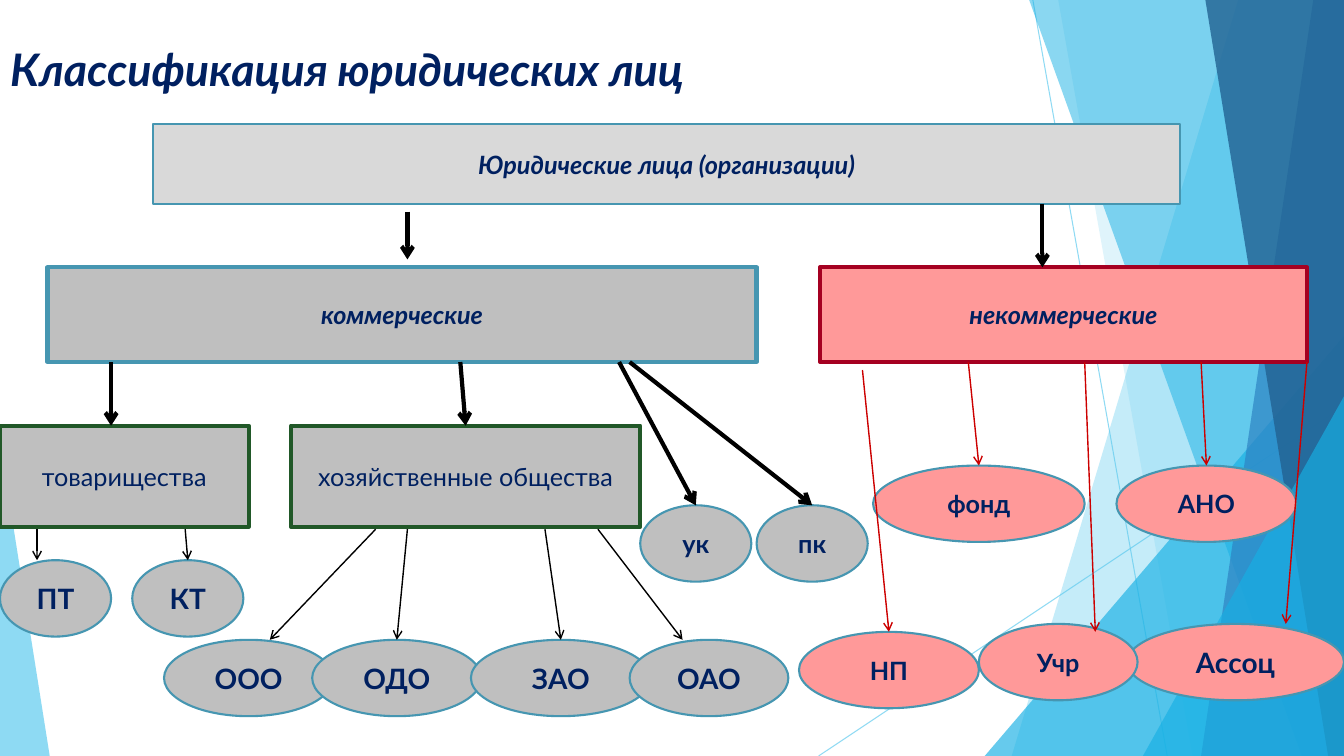
import dataclasses

import lxml.etree
import pptx
import pptx.dml.color
import pptx.enum.shapes
import pptx.enum.text
import pptx.oxml
import pptx.oxml.ns
import pptx.util

SHAPES = pptx.enum.shapes.MSO_SHAPE
ALIGN = pptx.enum.text.PP_ALIGN
COLUMNS, ROWS = 127, 95
WIDTH, HEIGHT = pptx.util.Inches(13.333), pptx.util.Inches(7.5)


@dataclasses.dataclass(frozen=True)
class Theme:
    font: str = "Lato"
    text: str = "002060"
    grey: str = "BFBFBF"
    light: str = "D9D9D9"
    pink: str = "FF9999"
    outline: str = "4696B1"
    green: str = "215828"
    crimson: str = "A50021"
    red: str = "CC0000"
    black: str = "000000"
    sky: str = "5FCBEF"
    azure: str = "17B0E4"
    blue: str = "2E83C3"
    navy: str = "226292"
    title_size: int = 32
    large: int = 20
    body: int = 18
    thick: float = 3
    medium: float = 1.5
    thin: float = 1
    hair: float = 0.75


THEME = Theme()

# Row levels of the diagram
KIND_TOP, KIND_BOTTOM = 33.6, 45.5
GROUP_TOP, GROUP_BOTTOM = 53.5, 66.5
FUND_TOP, UNITARY_TOP, PARTNER_TOP = 58.5, 63.5, 70.4
UNION_TOP, NP_TOP, COMPANY_TOP = 78.4, 79.4, 80.4
OVAL_ROWS = 9.6


def col(count):
    return round(WIDTH * count / COLUMNS)


def row(count):
    return round(HEIGHT * count / ROWS)


def rgb(value):
    return pptx.dml.color.RGBColor.from_string(value)


def set_opacity(color_parent, percent):
    color = color_parent.find(".//" + pptx.oxml.ns.qn("a:srgbClr"))
    alpha = lxml.etree.SubElement(color, pptx.oxml.ns.qn("a:alpha"))
    alpha.set("val", str(percent * 1000))


def format_text(para, size, bold=False, italic=False):
    for span in para.runs:
        span.font.name = THEME.font
        span.font.size = pptx.util.Pt(size)
        span.font.bold = bold
        span.font.italic = italic
        span.font.color.rgb = rgb(THEME.text)


def add_node(page, kind, place, words, fill, line, width, size=THEME.body,
             bold=True, italic=False):
    left, top, columns, rows = place
    box = page.shapes.add_shape(kind, col(left), row(top), col(columns), row(rows))
    box.shadow.inherit = False
    box.fill.solid()
    box.fill.fore_color.rgb = rgb(fill)
    box.line.color.rgb = rgb(line)
    box.line.width = pptx.util.Pt(width)
    box.text_frame.text = words
    box.text_frame.vertical_anchor = pptx.enum.text.MSO_ANCHOR.MIDDLE
    para = box.text_frame.paragraphs[0]
    para.alignment = ALIGN.CENTER
    format_text(para, size, bold, italic)


def add_line(page, start, end, color, width):
    line = page.shapes.add_connector(
        pptx.enum.shapes.MSO_CONNECTOR.STRAIGHT,
        col(start[0]), row(start[1]), col(end[0]), row(end[1]))
    line.line.color.rgb = rgb(color)
    line.line.width = pptx.util.Pt(width)
    properties = line._element.spPr
    lxml.etree.SubElement(properties, pptx.oxml.ns.qn("a:effectLst"))
    return line


def add_arrow(page, start, end, color, width):
    arrow = add_line(page, start, end, color, width)
    outline = arrow.line._get_or_add_ln()
    lxml.etree.SubElement(outline, pptx.oxml.ns.qn("a:tailEnd")).set("type", "arrow")


def paint_glass(shape, color, opacity):
    shape.shadow.inherit = False
    shape.fill.solid()
    shape.fill.fore_color.rgb = rgb(color)
    set_opacity(shape._element.spPr, opacity)
    shape.line.fill.background()


def add_band(page, top_left, top_right, bottom_right, bottom_left, color, opacity):
    builder = page.shapes.build_freeform(col(top_left), 0)
    builder.add_line_segments([(col(top_right), 0), (col(bottom_right), HEIGHT),
                               (col(bottom_left), HEIGHT)])
    paint_glass(builder.convert_to_shape(), color, opacity)


def add_corner(page, left, top, columns, apex, color, opacity):
    corner = page.shapes.add_shape(SHAPES.ISOSCELES_TRIANGLE, col(left), row(top),
                                   col(columns), row(ROWS - top))
    corner.adjustments[0] = apex
    paint_glass(corner, color, opacity)


def add_backdrop(page):
    for start, end in (((97.6, 0), (110.3, ROWS)), ((COLUMNS, 51.05), (77.35, ROWS))):
        line = add_line(page, start, end, THEME.sky, THEME.hair)
        set_opacity(line._element.spPr, 70)
    edge = COLUMNS
    add_band(page, 117, edge, edge, 95.6, THEME.sky, 36)
    add_band(page, 100, edge, edge, 112.7, THEME.sky, 20)
    add_corner(page, 93.05, 42.2, 33.95, 1, THEME.azure, 66)
    add_band(page, 97.25, edge, edge, 123, THEME.azure, 50)
    add_band(page, 124.1, edge, edge, 113.5, THEME.blue, 70)
    add_band(page, 113.9, edge, edge, 125.5, THEME.navy, 80)
    add_corner(page, 108, 49.8, 19, 1, THEME.azure, 66)
    add_corner(page, 0, 55.6, 4.7, 0, THEME.sky, 70)


def add_title(page, words):
    title = page.shapes.title
    title.left, title.top, title.width, title.height = 0, row(4.6), col(95), row(8)
    frame = title.text_frame
    frame.text = words
    frame.auto_size = pptx.enum.text.MSO_AUTO_SIZE.NONE
    frame.vertical_anchor = pptx.enum.text.MSO_ANCHOR.MIDDLE
    para = frame.paragraphs[0]
    para.alignment = ALIGN.LEFT
    format_text(para, THEME.title_size, bold=True, italic=True)


def add_boxes(page):
    kind_rows = KIND_BOTTOM - KIND_TOP
    for place, words, fill, line, width in (
            ((14.5, 15.6, 97, 10), "Юридические лица (организации)",
             THEME.light, THEME.outline, THEME.medium),
            ((4.5, KIND_TOP, 67, kind_rows), "коммерческие",
             THEME.grey, THEME.outline, THEME.thick),
            ((77.5, KIND_TOP, 46, kind_rows), "некоммерческие",
             THEME.pink, THEME.crimson, THEME.thick)):
        add_node(page, SHAPES.RECTANGLE, place, words, fill, line, width, italic=True)
    for left, columns, words in ((0, 23.5, "товарищества"),
                                 (27.5, 33, "хозяйственные общества")):
        add_node(page, SHAPES.RECTANGLE, (left, GROUP_TOP, columns, 12.7), words,
                 THEME.grey, THEME.green, THEME.thick, bold=False)


def add_ovals(page):
    for left, top, columns, words, fill, size in (
            (0, PARTNER_TOP, 10.5, "ПТ", THEME.grey, THEME.large),
            (15.5, COMPANY_TOP, 16, "ООО", THEME.grey, THEME.large),
            (29.5, COMPANY_TOP, 16, "ОДО", THEME.grey, THEME.large),
            (44.5, COMPANY_TOP, 17, "ЗАО", THEME.grey, THEME.large),
            (59.5, COMPANY_TOP, 15, "ОАО", THEME.grey, THEME.large),
            (12.5, PARTNER_TOP, 10.5, "КТ", THEME.grey, THEME.large),
            (60.5, UNITARY_TOP, 10.5, "ук", THEME.grey, THEME.body),
            (71.5, UNITARY_TOP, 10.5, "пк", THEME.grey, THEME.body),
            (82.5, FUND_TOP, 20, "фонд", THEME.pink, THEME.body),
            (105.5, FUND_TOP, 17, "АНО", THEME.pink, THEME.body),
            (75.5, NP_TOP, 17, "НП", THEME.pink, THEME.body),
            (106.5, UNION_TOP, 20.5, "Ассоц", THEME.pink, THEME.large),
            (92.5, UNION_TOP, 15, "Учр", THEME.pink, THEME.body)):
        add_node(page, SHAPES.OVAL, (left, top, columns, OVAL_ROWS), words,
                 fill, THEME.outline, THEME.medium, size)


def add_arrows(page):
    # Each arrow: start column, start row, end column, end row
    main_arrows = ((38.5, 26.6, 38.5, 32.6), (98.5, 25.6, 98.5, KIND_TOP),
                   (10.5, KIND_BOTTOM, 10.5, GROUP_TOP),
                   (43.5, KIND_BOTTOM, 44, GROUP_TOP),
                   (58.5, KIND_BOTTOM, 65.75, UNITARY_TOP),
                   (59.5, KIND_BOTTOM, 76.75, UNITARY_TOP))
    form_arrows = ((3.5, GROUP_BOTTOM, 3.5, PARTNER_TOP),
                   (17.5, GROUP_BOTTOM, 17.75, PARTNER_TOP),
                   (35.5, GROUP_BOTTOM, 25.5, COMPANY_TOP),
                   (38.5, GROUP_BOTTOM, 37.5, COMPANY_TOP),
                   (51.5, GROUP_BOTTOM, 53, COMPANY_TOP),
                   (56.5, GROUP_BOTTOM, 64.5, COMPANY_TOP))
    nonprofit_arrows = ((91.5, KIND_BOTTOM, 92.5, FUND_TOP),
                        (113.5, KIND_BOTTOM, 114, FUND_TOP),
                        (81.5, 46.5, 84, NP_TOP),
                        (102.5, KIND_BOTTOM, 103.5, NP_TOP),
                        (123.5, KIND_BOTTOM, 121.5, UNION_TOP))
    for arrows, color, width in ((main_arrows, THEME.black, THEME.thick),
                                 (form_arrows, THEME.black, THEME.thin),
                                 (nonprofit_arrows, THEME.red, THEME.thin)):
        for x1, y1, x2, y2 in arrows:
            add_arrow(page, (x1, y1), (x2, y2), color, width)


def main():
    deck = pptx.Presentation()
    deck.slide_width, deck.slide_height = WIDTH, HEIGHT
    page = deck.slides.add_slide(deck.slide_layouts.get_by_name("Title Only"))
    add_backdrop(page)
    add_title(page, "Классификация юридических лиц")
    add_boxes(page)
    add_ovals(page)
    add_arrows(page)
    deck.save("out.pptx")


if __name__ == "__main__":
    main()
